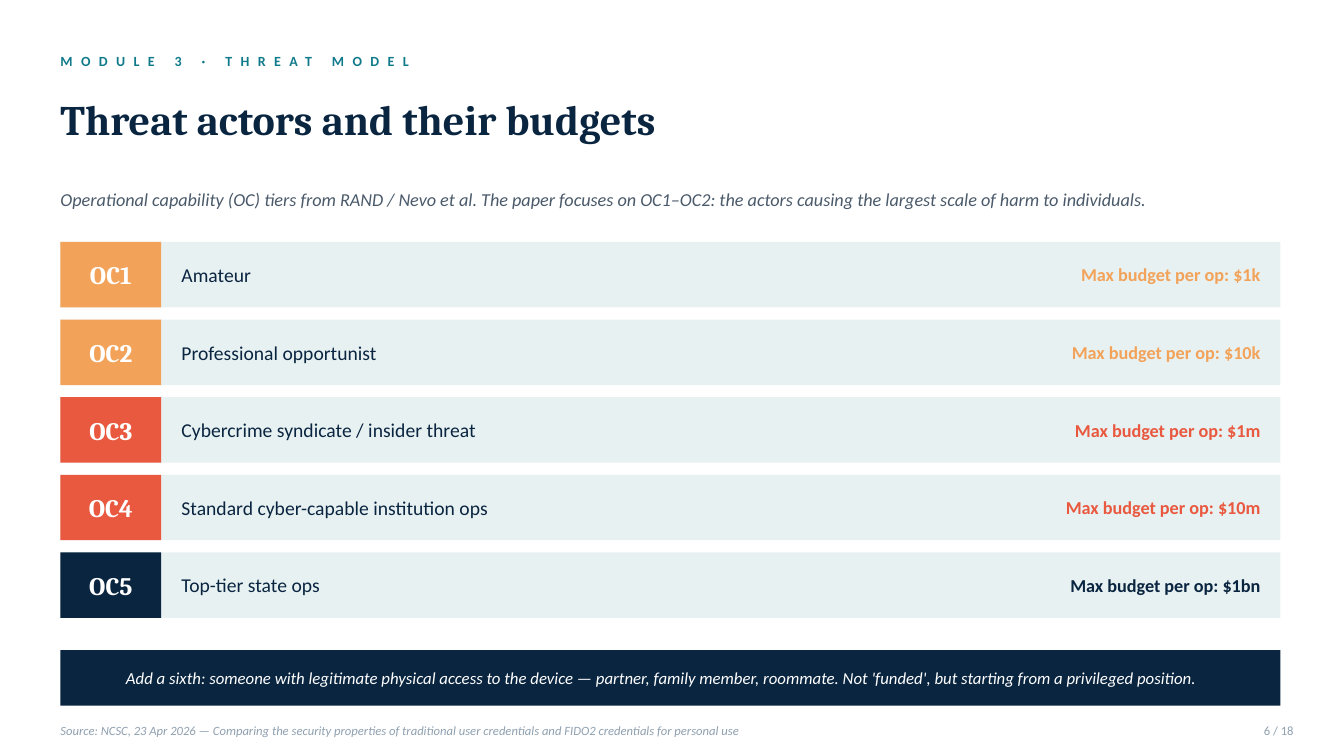
from pptx import Presentation
from pptx.dml.color import RGBColor
from pptx.enum.shapes import MSO_SHAPE
from pptx.enum.text import MSO_ANCHOR, MSO_AUTO_SIZE, PP_ALIGN
from pptx.util import Inches, Pt

RECTANGLE = MSO_SHAPE.RECTANGLE
MIDDLE = MSO_ANCHOR.MIDDLE
NO_AUTOFIT = MSO_AUTO_SIZE.NONE
LEFT, CENTER, RIGHT = PP_ALIGN.LEFT, PP_ALIGN.CENTER, PP_ALIGN.RIGHT

NAVY = RGBColor(0x0A, 0x25, 0x40)
TEAL = RGBColor(0x0F, 0x7B, 0x8A)
SLATE = RGBColor(0x4A, 0x5A, 0x6A)
MIST = RGBColor(0xE8, 0xF1, 0xF2)
AMBER = RGBColor(0xF2, 0xA3, 0x59)
CORAL = RGBColor(0xE8, 0x59, 0x3F)
GREY = RGBColor(0x8F, 0xA0, 0xB0)
WHITE = RGBColor(0xFF, 0xFF, 0xFF)

BODY_FONT, HEADING_FONT = "Calibri", "Cambria"
MARGIN, CONTENT_WIDTH = 0.6, 12.1

TIERS = [
    ("OC1", "Amateur", "$1k", AMBER),
    ("OC2", "Professional opportunist", "$10k", AMBER),
    ("OC3", "Cybercrime syndicate / insider threat", "$1m", CORAL),
    ("OC4", "Standard cyber-capable institution ops", "$10m", CORAL),
    ("OC5", "Top-tier state ops", "$1bn", NAVY),
]


def write(shape, text, size, color, font=BODY_FONT, bold=False, italic=False,
          align=LEFT, inset=0):
    """Fill a shape with one vertically centred paragraph and return its run."""
    frame = shape.text_frame
    frame.word_wrap = True
    frame.auto_size = NO_AUTOFIT
    frame.vertical_anchor = MIDDLE
    frame.margin_left = Inches(inset)
    frame.margin_right = frame.margin_top = frame.margin_bottom = 0
    frame.text = text
    paragraph = frame.paragraphs[0]
    paragraph.alignment = align
    run = paragraph.runs[0]
    run.font.name = font
    run.font.size = Pt(size)
    run.font.bold = bold
    run.font.italic = italic
    run.font.color.rgb = color
    return run


def add_label(slide, left, top, width, height, text, size, color, **style):
    label = slide.shapes.add_textbox(
        Inches(left), Inches(top), Inches(width), Inches(height))
    return write(label, text, size, color, **style)


def add_block(slide, left, top, width, height, fill):
    block = slide.shapes.add_shape(
        RECTANGLE, Inches(left), Inches(top), Inches(width), Inches(height))
    block.shadow.inherit = False
    block.fill.solid()
    block.fill.fore_color.rgb = fill
    block.line.fill.background()
    return block


def add_header(slide, left, top, width):
    # Module line with wide letter spacing
    module = add_label(slide, left, top, width, 0.3, "MODULE 3 · THREAT MODEL",
                       10, TEAL, bold=True)
    module._r.get_or_add_rPr().set("spc", "600")

    # Title
    title = slide.shapes.title
    title.left, title.top = Inches(left), Inches(top + 0.3)
    title.width, title.height = Inches(width), Inches(0.85)
    write(title, "Threat actors and their budgets", 30, NAVY,
          font=HEADING_FONT, bold=True)

    # Introduction
    add_label(slide, left, top + 1.25, width, 0.55,
              "Operational capability (OC) tiers from RAND / Nevo et al. "
              "The paper focuses on OC1–OC2: the actors causing the largest "
              "scale of harm to individuals.", 13, SLATE, italic=True)


def add_tier(slide, left, top, width, height, code, actor, budget, color):
    badge_width, padding, budget_width = 1, 0.2, 3.5
    bar = add_block(slide, left, top, width, height, MIST)
    write(bar, actor, 14, NAVY, inset=badge_width + padding)
    badge = add_block(slide, left, top, badge_width, height, color)
    write(badge, code, 18, WHITE, font=HEADING_FONT, bold=True, align=CENTER)
    add_label(slide, left + width - padding - budget_width, top, budget_width,
              height, f"Max budget per op: {budget}", 13, color,
              bold=True, align=RIGHT)


def add_tiers(slide, left, top, width):
    row_height, gap = 0.65, 0.12
    for row, tier in enumerate(TIERS):
        add_tier(slide, left, top + row * (row_height + gap), width,
                 row_height, *tier)


def add_sixth_actor(slide, left, top, width, height):
    band = add_block(slide, left, top, width, height, NAVY)
    write(band, "Add a sixth: someone with legitimate physical access to the "
          "device — partner, family member, roommate. Not 'funded', but "
          "starting from a privileged position.", 12, WHITE, italic=True,
          inset=0.65)


def add_footer(slide, left, top, right):
    height, page_width = 0.3, 0.6
    add_label(slide, left, top, 10.5, height,
              "Source: NCSC, 23 Apr 2026 — Comparing the security properties "
              "of traditional user credentials and FIDO2 credentials for "
              "personal use", 9, GREY, italic=True)
    add_label(slide, right - page_width, top, page_width, height, "6 / 18",
              9, GREY, align=RIGHT)


def main():
    presentation = Presentation()
    presentation.slide_width = Inches(13.33)
    presentation.slide_height = Inches(7.5)
    title_only = presentation.slide_layouts[5]
    slide = presentation.slides.add_slide(title_only)

    add_header(slide, MARGIN, 0.45, CONTENT_WIDTH)
    add_tiers(slide, MARGIN, 2.4, CONTENT_WIDTH)
    add_sixth_actor(slide, MARGIN, 6.45, CONTENT_WIDTH, 0.55)
    add_footer(slide, MARGIN, 7.1, 12.83)

    presentation.save("out.pptx")


if __name__ == "__main__":
    main()
